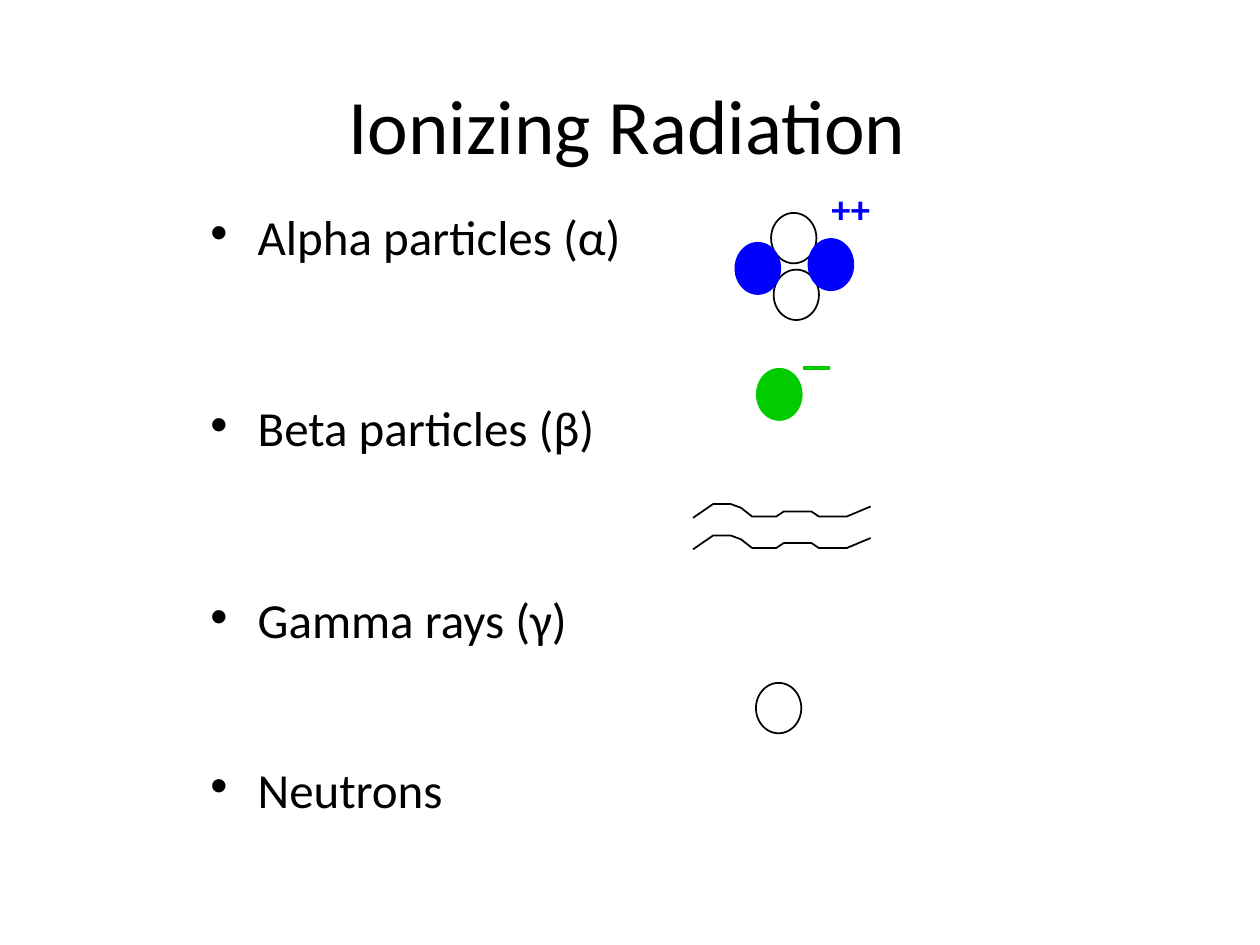
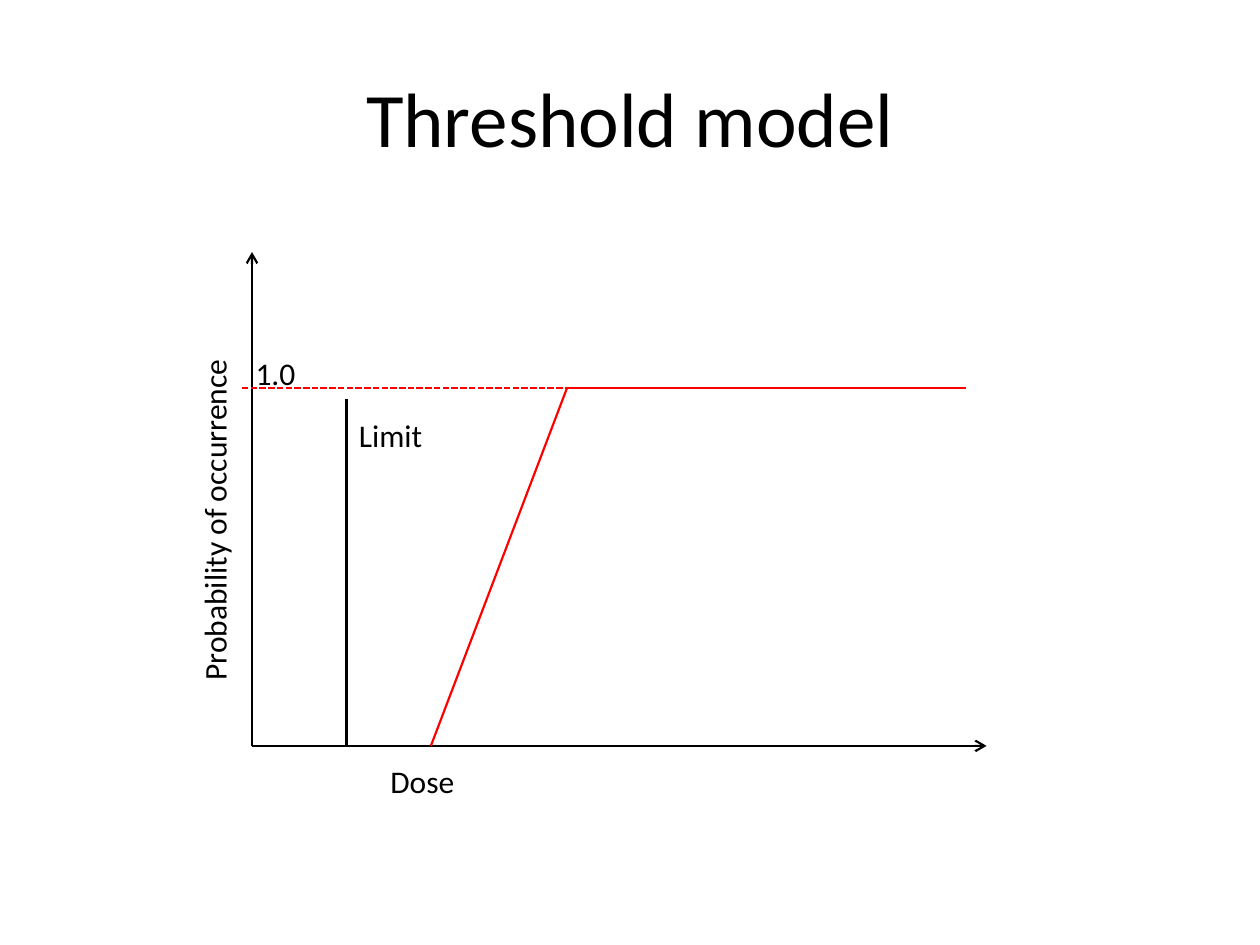
from dataclasses import dataclass

from lxml.etree import SubElement
from pptx import Presentation
from pptx.dml.color import RGBColor
from pptx.enum.dml import MSO_LINE
from pptx.enum.shapes import MSO_CONNECTOR, MSO_SHAPE
from pptx.enum.text import MSO_ANCHOR, MSO_AUTO_SIZE, PP_ALIGN
from pptx.oxml.ns import qn
from pptx.util import Inches, Pt


# Theme
@dataclass(frozen=True)
class Theme:
    font: str = "Calibri"
    black: RGBColor = RGBColor(0, 0, 0)
    red: RGBColor = RGBColor(0xFF, 0, 0)
    green: RGBColor = RGBColor(0, 0xCC, 0)
    blue: RGBColor = RGBColor(0, 0, 0xFF)
    title: int = 44
    body: int = 28
    charge: int = 22
    label: int = 18


T = Theme()
TITLE_AND_BODY, TITLE_ONLY = 1, 5

# Content, slide 1: text and space before it in points
RADIATION = [
    ("Alpha particles (α)", 2),
    ("Beta particles (β)", 89.5),
    ("Gamma rays (γ)", 89.5),
    ("Neutrons", 76.5),
]
# Left, top of each particle
NEUTRONS = [(6.12, 1.69), (6.14, 2.14), (6, 5.42)]
PROTONS = [(5.83, 1.92), (6.41, 1.89)]
ELECTRON = (6, 2.92)
NEUTRON_SIZE, CHARGED_SIZE = (0.36, 0.4), (0.37, 0.42)
# Wave outline, relative to its left and top
WAVE = [(0, 0.11), (0.16, 0), (0.3, 0), (0.38, 0.03), (0.47, 0.1), (0.66, 0.1),
        (0.72, 0.06), (0.94, 0.06), (1, 0.1), (1.22, 0.1), (1.41, 0.02)]
WAVE_LEFT, WAVE_TOPS = 5.5, (4, 4.25)

# Content, slide 2: the graph's key positions
ORIGIN_X, ORIGIN_Y = 2, 5.92
CERTAIN_Y = 3.08
THRESHOLD_X, CERTAIN_X, LIMIT_X = 3.42, 4.5, 2.75
# From, to, colour, arrowhead, dashed
GRAPH_LINES = [
    ((ORIGIN_X, ORIGIN_Y), (ORIGIN_X, 2), T.black, True, False),
    ((ORIGIN_X, ORIGIN_Y), (7.83, ORIGIN_Y), T.black, True, False),
    ((THRESHOLD_X, ORIGIN_Y), (CERTAIN_X, CERTAIN_Y), T.red, False, False),
    ((CERTAIN_X, CERTAIN_Y), (7.67, CERTAIN_Y), T.red, False, False),
    ((1.92, CERTAIN_Y), (5.08, CERTAIN_Y), T.red, False, True),
    ((LIMIT_X, ORIGIN_Y), (LIMIT_X, 3.17), T.black, False, False),
]
# Text, left, top, width, rotation
GRAPH_LABELS = [
    ("Probability of occurrence", 0.16, 3.76, 3.08, 270),
    ("Dose", 3, 6, 3.08, 0),
    ("1.0", 1.93, 2.76, 0.83, 0),
    ("Limit", LIMIT_X, 3.25, 0.83, 0),
]


# Shared helpers
def place(sp, left, top, width, height):
    sp.left, sp.top = Inches(left), Inches(top)
    sp.width, sp.height = Inches(width), Inches(height)


def format_runs(p, size, color=T.black, bold=False):
    for r in p.runs:
        r.font.name, r.font.size, r.font.bold = T.font, Pt(size), bold
        r.font.color.rgb = color


def add_slide(prs, layout, title, box):
    s = prs.slides.add_slide(prs.slide_layouts[layout])
    place(s.shapes.title, *box)
    tf = s.shapes.title.text_frame
    tf.text = title
    tf.vertical_anchor = MSO_ANCHOR.MIDDLE
    tf.paragraphs[0].alignment = PP_ALIGN.CENTER
    format_runs(tf.paragraphs[0], T.title)
    return s


def add_line(s, start, end, color, width, arrow=False, dashed=False):
    ends = [Inches(v) for v in (*start, *end)]
    cx = s.shapes.add_connector(MSO_CONNECTOR.STRAIGHT, *ends)
    cx.line.color.rgb, cx.line.width = color, Pt(width)
    if dashed:
        cx.line.dash_style = MSO_LINE.SQUARE_DOT
    if arrow:
        SubElement(cx.line._get_or_add_ln(), qn("a:tailEnd"), type="arrow")
    SubElement(cx._element.spPr, qn("a:effectLst"))


def add_label(s, text, box, size, color=T.black, bold=False, wrap=True):
    sp = s.shapes.add_textbox(*[Inches(v) for v in box])
    tf = sp.text_frame
    tf.text = text
    tf.word_wrap = wrap
    tf.auto_size = MSO_AUTO_SIZE.SHAPE_TO_FIT_TEXT
    format_runs(tf.paragraphs[0], size, color, bold)
    return sp


def outline_only(sp):
    sp.fill.background()
    sp.line.color.rgb, sp.line.width = T.black, Pt(1)
    sp.shadow.inherit = False


def add_particle(s, position, size, color=None):
    sp = s.shapes.add_shape(MSO_SHAPE.OVAL, *[Inches(v) for v in position + size])
    outline_only(sp)
    if color is not None:
        sp.fill.solid()
        sp.fill.fore_color.rgb = color
        sp.line.fill.background()


def add_wave(s, top):
    points = [(Inches(WAVE_LEFT + x), Inches(top + y)) for x, y in WAVE]
    builder = s.shapes.build_freeform(*points[0])
    builder.add_line_segments(points[1:], close=False)
    outline_only(builder.convert_to_shape())


# Slides
def radiation_slide(prs):
    s = add_slide(prs, TITLE_AND_BODY, "Ionizing Radiation", (0.98, 0.52, 8, 0.92))
    body = s.placeholders[1]
    place(body, 1.57, 1.75, 3.67, 4.75)
    tf = body.text_frame
    tf.text = "\n".join(text for text, _ in RADIATION)
    tf.auto_size = MSO_AUTO_SIZE.NONE
    for p, (_, gap) in zip(tf.paragraphs, RADIATION):
        p.line_spacing, p.space_before = 0.6, Pt(gap)
        format_runs(p, T.body)

    for top in WAVE_TOPS:
        add_wave(s, top)
    add_particle(s, ELECTRON, CHARGED_SIZE, T.green)
    add_line(s, (6.37, 2.92), (6.59, 2.92), T.green, 2)
    for position in NEUTRONS:
        add_particle(s, position, NEUTRON_SIZE)
    for position in PROTONS:
        add_particle(s, position, CHARGED_SIZE, T.blue)
    add_label(s, "++", (6.5, 1.42, 0.53, 0.46), T.charge, T.blue, bold=True, wrap=False)


def threshold_slide(prs):
    s = add_slide(prs, TITLE_ONLY, "Threshold model", (0.5, 0.3, 9, 1.25))
    for start, end, color, arrow, dashed in GRAPH_LINES:
        add_line(s, start, end, color, 1.25, arrow, dashed)
    for text, left, top, width, rotation in GRAPH_LABELS:
        add_label(s, text, (left, top, width, 0.4), T.label).rotation = rotation


def main():
    prs = Presentation()
    prs.slide_width, prs.slide_height = Inches(10), Inches(7.5)
    radiation_slide(prs)
    threshold_slide(prs)
    prs.save("out.pptx")


if __name__ == "__main__":
    main()
